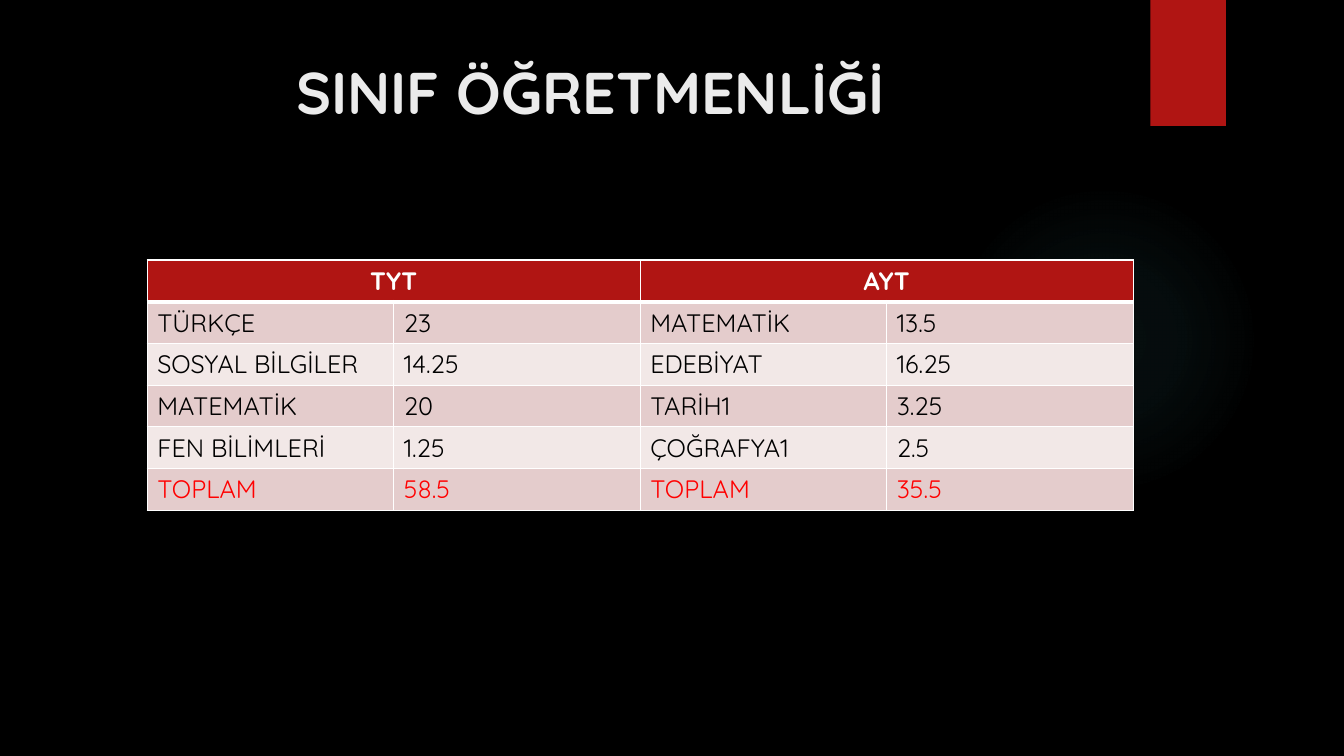
"""Build the slide of exam net scores for SINIF ÖĞRETMENLİĞİ."""
from lxml import etree
from pptx import Presentation
from pptx.dml.color import RGBColor
from pptx.enum.shapes import MSO_SHAPE
from pptx.enum.text import MSO_ANCHOR, PP_ALIGN
from pptx.oxml import parse_xml
from pptx.util import Inches, Pt

OVAL, RECT = MSO_SHAPE.OVAL, MSO_SHAPE.RECTANGLE
TOP, CENTER, LEFT = MSO_ANCHOR.TOP, PP_ALIGN.CENTER, PP_ALIGN.LEFT
NS = "http://schemas.openxmlformats.org/drawingml/2006/main"
THEME = {
    "font": "Quicksand", "title": 42, "cell": 18,
    "back": "000000", "light": "EBEBEB", "red": "B01513", "glow": "50B9C1",
    "white": "FFFFFF", "ink": "000000", "total": "FF0000",
    "bands": ("E4CCCC", "F2E8E7"),
}
HEADS = ("TYT", "AYT")
SCORES = (
    ("TÜRKÇE", "23", "MATEMATİK", "13.5"),
    ("SOSYAL BİLGİLER", "14.25", "EDEBİYAT", "16.25"),
    ("MATEMATİK", "20", "TARİH1", "3.25"),
    ("FEN BİLİMLERİ", "1.25", "ÇOĞRAFYA1", "2.5"),
    ("TOPLAM", "58.5", "TOPLAM", "35.5"),
)
ROWS, COLS = len(SCORES) + 1, len(SCORES[0])


def style(para, size, color, bold, align):
    para.alignment = align
    para.font.name = THEME["font"]
    para.font.size = Pt(size)
    para.font.bold = bold
    para.font.color.rgb = RGBColor.from_string(color)


def border(cell, side, width):
    line = etree.SubElement(cell._tc.get_or_add_tcPr(), f"{{{NS}}}ln{side}", w=str(Pt(width)))
    fill = etree.SubElement(line, f"{{{NS}}}solidFill")
    etree.SubElement(fill, f"{{{NS}}}srgbClr", val=THEME["white"])


deck = Presentation()
deck.slide_width, deck.slide_height = Inches(13.33), Inches(7.5)
slide = deck.slides.add_slide(deck.slide_layouts[5])
slide.background.fill.solid()
slide.background.fill.fore_color.rgb = RGBColor.from_string(THEME["back"])

glow = slide.shapes.add_shape(OVAL, Inches(9.41), Inches(1.83), Inches(3.08), Inches(3.08))
glow.shadow.inherit = False
glow.line.fill.background()
glow.fill.background()
stops = "".join(
    f'<a:gs pos="{pos}000"><a:srgbClr val="{THEME["glow"]}"><a:alpha val="{alpha}000"/></a:srgbClr></a:gs>'
    for pos, alpha in ((0, 7), (36, 6), (69, 0)))
blend = parse_xml(
    f'<a:gradFill xmlns:a="{NS}"><a:gsLst>{stops}</a:gsLst><a:path path="circle">'
    '<a:fillToRect l="50000" t="50000" r="50000" b="50000"/></a:path></a:gradFill>')
empty = glow._element.spPr.find(f"{{{NS}}}noFill")
empty.getparent().replace(empty, blend)

ribbon = slide.shapes.add_shape(RECT, Inches(11.41), 0, Inches(0.75), Inches(1.25))
ribbon.shadow.inherit = False
ribbon.line.fill.background()
ribbon.fill.solid()
ribbon.fill.fore_color.rgb = RGBColor.from_string(THEME["red"])

title = slide.shapes.title
title.left, title.top = Inches(0.71), Inches(0.5)
title.width, title.height = Inches(10.29), Inches(1.53)
title.text_frame.text = "SINIF ÖĞRETMENLİĞİ"
title.text_frame.vertical_anchor = TOP
style(title.text_frame.paragraphs[0], THEME["title"], THEME["light"], True, CENTER)

table = slide.shapes.add_table(
    ROWS, COLS, Inches(1.46), Inches(2.58), Inches(9.78), Inches(0.41 * ROWS)).table
table.horz_banding = False
for col, head in enumerate(HEADS):
    table.cell(0, 2 * col).merge(table.cell(0, 2 * col + 1))
    table.cell(0, 2 * col).text = head
for row, scores in enumerate(SCORES, 1):
    for col, score in enumerate(scores):
        table.cell(row, col).text = score

for row in range(ROWS):
    first, last = row == 0, row == ROWS - 1
    ink = THEME["white"] if first else THEME["total"] if last else THEME["ink"]
    fill = THEME["red"] if first else THEME["bands"][(row - 1) % 2]
    for cell in table.rows[row].cells:
        for side, width in (("L", 1), ("R", 1), ("T", 3 if row == 1 else 1), ("B", 3 if first else 1)):
            border(cell, side, width)
        cell.fill.solid()
        cell.fill.fore_color.rgb = RGBColor.from_string(fill)
        style(cell.text_frame.paragraphs[0], THEME["cell"], ink, first, CENTER if first else LEFT)

deck.save("out.pptx")
